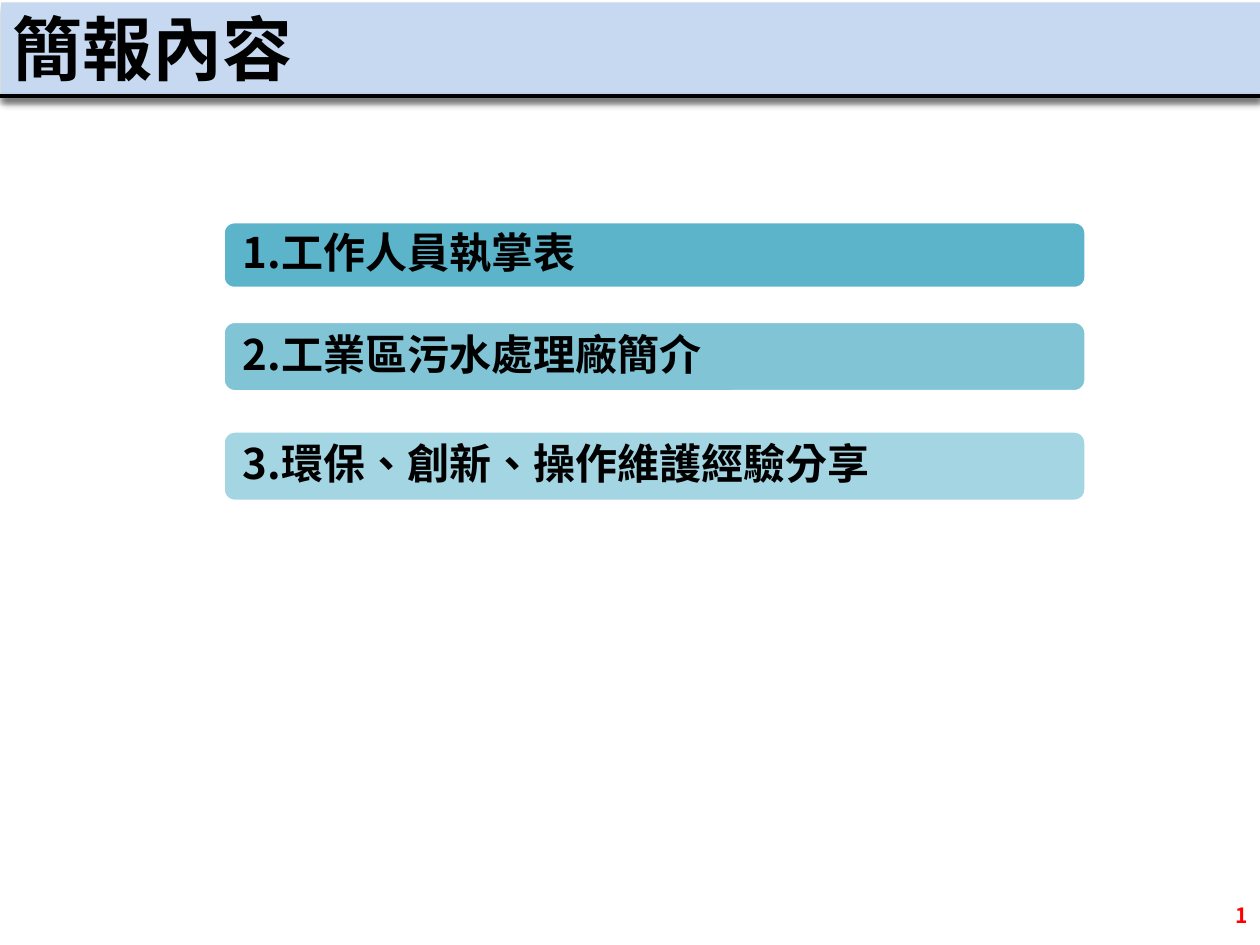
from dataclasses import dataclass

from lxml import etree
from pptx import Presentation
from pptx import util as u
from pptx.dml.color import RGBColor
from pptx.enum import shapes, text
from pptx.oxml.ns import qn


@dataclass(frozen=True)
class Theme:
    font: str = "Noto Sans CJK SC"
    ink: str = "000000"
    paper: str = "FFFFFF"
    banner: str = "C6D9F1"
    agenda: str = "4BACC6"
    number: str = "FF0000"
    title_size: int = 40
    agenda_size: int = 24
    number_size: int = 12


THEME = Theme()
AGENDA = [
    ("1.工作人員執掌表", 1.76, 0.53, 90),
    ("2.工業區污水處理廠簡介", 2.55, 0.56, 70),
    ("3.環保、創新、操作維護經驗分享", 3.42, 0.56, 50),
]


def write_text(shape, content, *, size, color, align=text.PP_ALIGN.LEFT,
               inset=(0.1, 0.05), line_spacing=None, space_after=None):
    """Write one bold paragraph into a shape and return its run."""
    frame = shape.text_frame
    frame.word_wrap = True
    frame.auto_size = text.MSO_AUTO_SIZE.NONE
    frame.vertical_anchor = text.MSO_ANCHOR.MIDDLE
    frame.margin_left = frame.margin_right = u.Inches(inset[0])
    frame.margin_top = frame.margin_bottom = u.Inches(inset[1])
    paragraph = frame.paragraphs[0]
    paragraph.alignment = align
    paragraph.line_spacing = line_spacing
    paragraph.space_after = space_after
    run = paragraph.add_run()
    run.text = content
    run.font.size = u.Pt(size)
    run.font.bold = True
    run.font.color.rgb = RGBColor.from_string(color)
    run.font.name = THEME.font
    properties = run.font._element
    properties.set("lang", "zh-TW")
    etree.SubElement(properties, qn("a:ea"), typeface=THEME.font)
    return run


class SlideBuilder:
    """Hold the theme and the current slide, and draw its elements."""

    def __init__(self, presentation, theme):
        self.theme = theme
        self.slide = presentation.slides.add_slide(presentation.slide_layouts[5])

    def box(self, kind, left, top, width, height, fill, alpha=100):
        """Add a filled preset shape without an outline or shadow."""
        shape = self.slide.shapes.add_shape(
            kind, *map(u.Inches, (left, top, width, height)))
        shape.shadow.inherit = False
        shape.fill.solid()
        shape.fill.fore_color.rgb = RGBColor.from_string(fill)
        shape.line.fill.background()
        if alpha < 100:
            color = shape._element.spPr.find(qn("a:solidFill"))[0]
            etree.SubElement(color, qn("a:alpha"), val=str(alpha * 1000))
        return shape

    def shadow(self, shape, alpha, blur, distance):
        """Give a shape a shadow that falls straight down."""
        properties = shape._element.spPr
        effects = properties.find(qn("a:effectLst"))
        if effects is None:
            effects = etree.SubElement(properties, qn("a:effectLst"))
        outer = etree.SubElement(
            effects, qn("a:outerShdw"), blurRad=str(u.Pt(blur)),
            dist=str(u.Pt(distance)), dir="5400000", rotWithShape="0")
        color = etree.SubElement(outer, qn("a:srgbClr"), val=self.theme.ink)
        etree.SubElement(color, qn("a:alpha"), val=str(alpha * 1000))

    def banner(self):
        """Draw the title band and the rule below it."""
        band = self.box(shapes.MSO_SHAPE.RECTANGLE, 0.01, 0.02, 10, 0.76,
                        self.theme.banner)
        self.shadow(band, 40, 4, 3)
        rule = self.slide.shapes.add_connector(
            shapes.MSO_CONNECTOR.STRAIGHT, *map(u.Inches, (0, 0.76, 10, 0.76)))
        rule.line.color.rgb = RGBColor.from_string(self.theme.ink)
        rule.line.width = u.Pt(2)
        self.shadow(rule, 38, 3.1, 1.6)

    def title(self, content):
        """Place the title in front of the banner."""
        title = self.slide.shapes.title
        title.left, title.top, title.width, title.height = map(
            u.Inches, (0, 0, 7.05, 0.76))
        write_text(title, content, size=self.theme.title_size,
                   color=self.theme.ink)
        self.slide.shapes._spTree.append(title._element)

    def slide_number(self):
        """Add the slide number as a live field."""
        box = self.slide.shapes.add_textbox(
            *map(u.Inches, (9.41, 7.06, 0.59, 0.4)))
        run = write_text(box, "1", size=self.theme.number_size,
                         color=self.theme.number, align=text.PP_ALIGN.RIGHT)
        field = run._r
        field.tag = qn("a:fld")
        field.set("id", "{B6F15528-21DE-4FAA-801E-634DDDAF4B2B}")
        field.set("type", "slidenum")

    def agenda_item(self, content, top, height, alpha):
        """Add one rounded agenda bar with its text."""
        bar = self.box(shapes.MSO_SHAPE.ROUNDED_RECTANGLE, 1.77, top, 6.85,
                       height, self.theme.agenda, alpha)
        bar.line.color.rgb = RGBColor.from_string(self.theme.paper)
        bar.line.width = u.Pt(2)
        size = self.theme.agenda_size
        write_text(bar, content, size=size, color=self.theme.ink,
                   inset=(0.13, 0.1), line_spacing=0.9,
                   space_after=u.Pt(size * 0.35))


def main():
    presentation = Presentation()
    presentation.slide_width = u.Inches(10)
    presentation.slide_height = u.Inches(7.5)
    builder = SlideBuilder(presentation, THEME)
    builder.banner()
    builder.title("簡報內容")
    builder.slide_number()
    for item in AGENDA:
        builder.agenda_item(*item)
    presentation.save("out.pptx")


if __name__ == "__main__":
    main()
